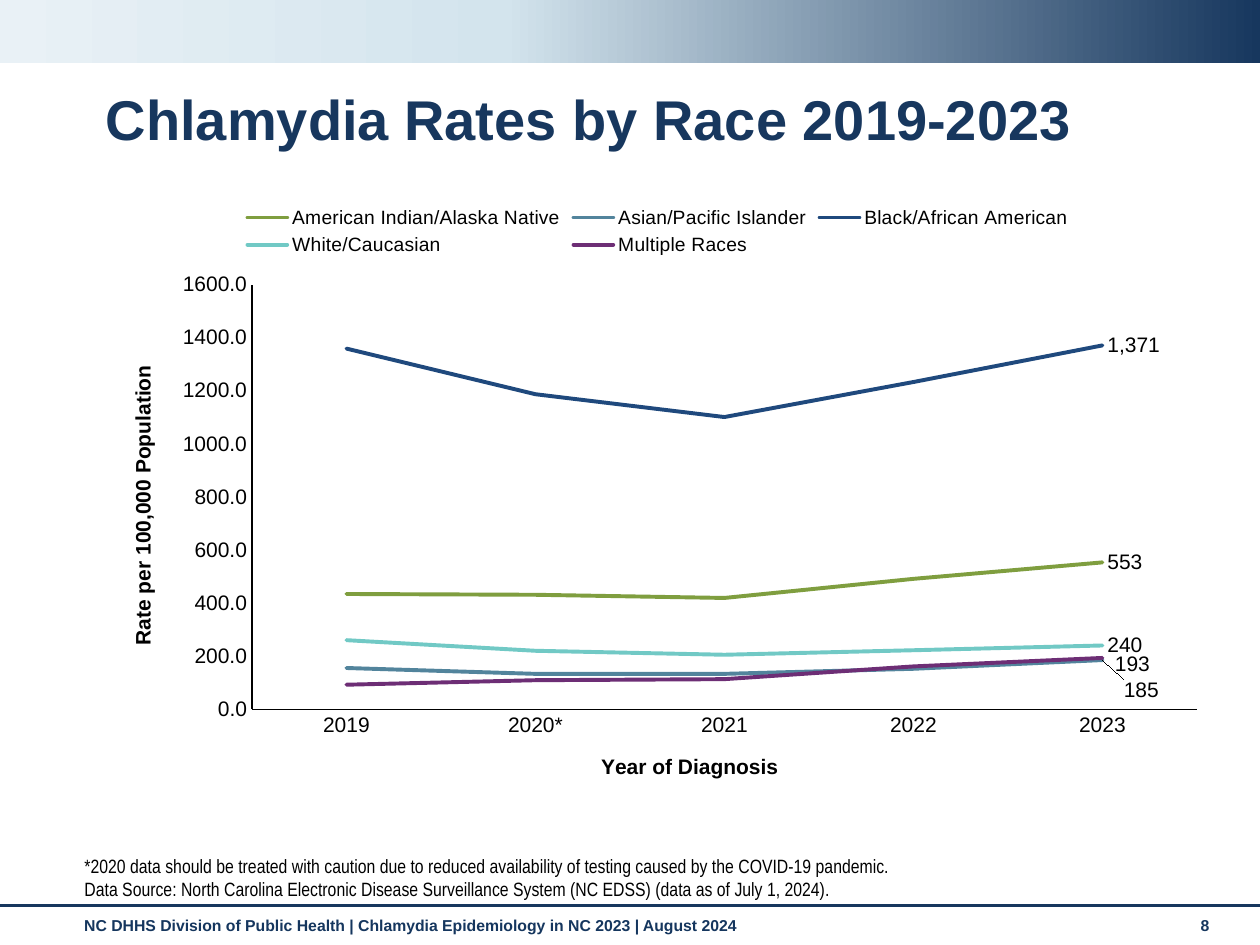
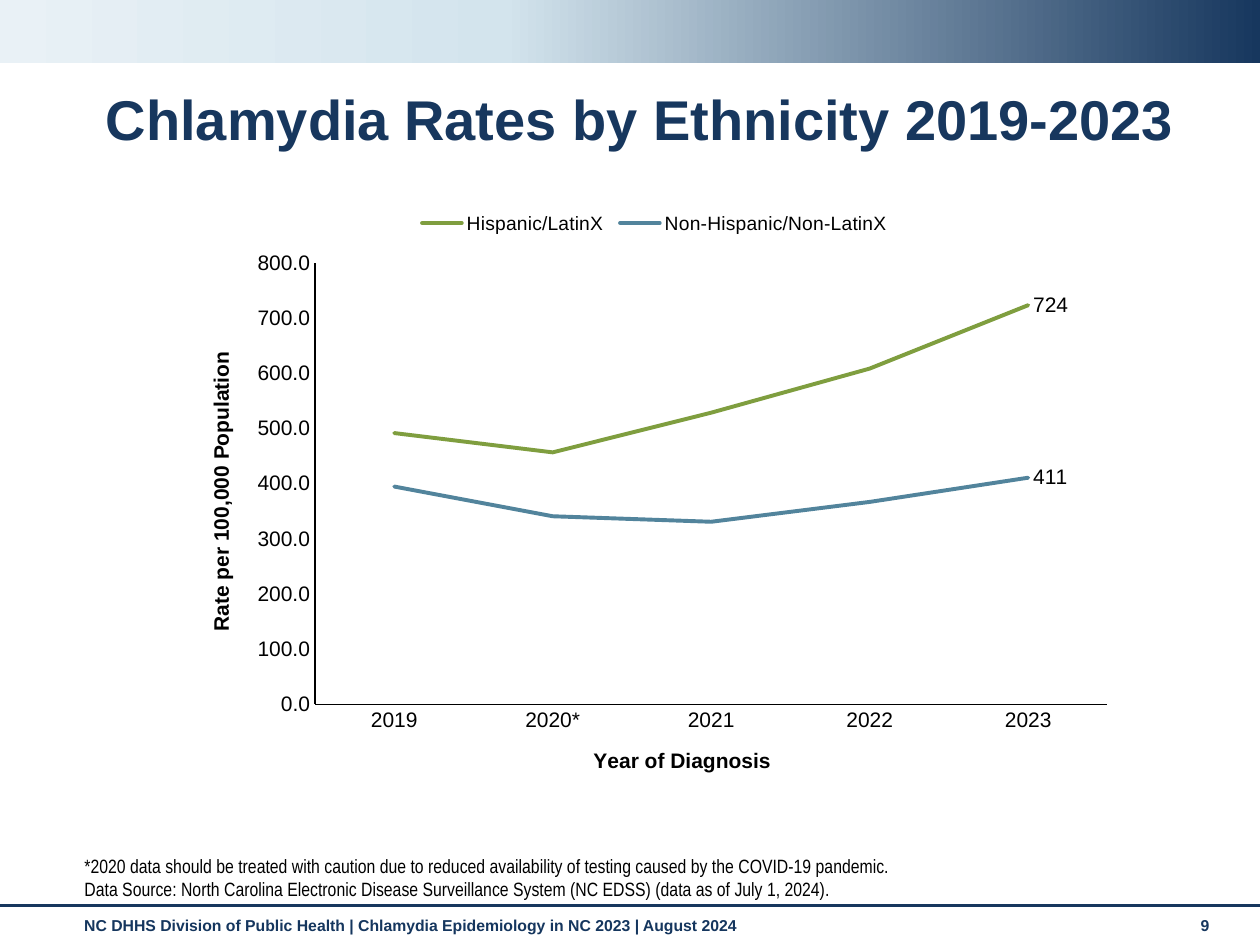
"""Builds two slides on chlamydia rates by race and by ethnicity."""
import copy

import lxml.etree
import pptx
import pptx.chart.data
import pptx.dml.color
import pptx.enum.chart
import pptx.enum.shapes
import pptx.enum.text
import pptx.oxml
import pptx.oxml.ns
import pptx.util

RGBColor = pptx.dml.color.RGBColor
Inches = pptx.util.Inches
Pt = pptx.util.Pt
qn = pptx.oxml.ns.qn

NAVY = RGBColor(0x17, 0x37, 0x5E)
FOOTER_NAVY = RGBColor(0x15, 0x36, 0x5E)
BLACK = RGBColor(0, 0, 0)
PALE_BLUE = RGBColor(0xD3, 0xE4, 0xED)
PALEST_BLUE = RGBColor(0xE9, 0xF1, 0xF6)
GREEN = RGBColor(0x7F, 0x9E, 0x3F)
STEEL = RGBColor(0x52, 0x84, 0x9C)
BLUE = RGBColor(0x1F, 0x49, 0x7D)
TEAL = RGBColor(0x71, 0xC9, 0xC5)
PURPLE = RGBColor(0x6D, 0x2E, 0x75)

TITLE_FONT = {"name": "Arial", "size": Pt(32), "bold": True}
NOTE_FONT = {"name": "Arial Narrow", "size": Pt(11)}
FOOTER_FONT = {"name": "Arial", "size": Pt(9), "bold": True}
CHART_FONT = {"name": "Arial", "size": Pt(10)}
LEGEND_FONT = {"name": "Arial", "size": Pt(11)}
AXIS_FONT = {"name": "Arial", "size": Pt(12), "bold": False}
AXIS_TITLE_FONT = {"name": "Arial", "size": Pt(12), "bold": True}

FOOTER = "NC DHHS Division of Public Health | Chlamydia Epidemiology in NC 2023 | August 2024"
NOTES = [
    "*2020 data should be treated with caution due to reduced availability of testing caused by the COVID-19 pandemic.",
    "Data Source: North Carolina Electronic Disease Surveillance System (NC EDSS) (data as of July 1, 2024).",
]
YEARS = ["2019", "2020*", "2021", "2022", "2023"]
FIRST_NUMBER = 8
NO_LEADER_LINES = (
    '<c:extLst xmlns:c="http://schemas.openxmlformats.org/drawingml/2006/chart">'
    '<c:ext uri="{CE6537A1-D6FC-4f65-9D91-7224C49458BB}" '
    'xmlns:c15="http://schemas.microsoft.com/office/drawing/2012/chart">'
    '<c15:showLeaderLines val="0"/></c:ext></c:extLst>'
)

SLIDES = [
    {
        "title": "Chlamydia Rates by Race 2019-2023",
        "title_width": 8.58,
        "box": (0.82, 1.53, 8.85, 4.86),
        "maximum": 1600,
        "step": 200,
        "plot_box": (2.0, 2.26, 7.5, 3.37),
        "legend_box": (1.91, 1.6, 6.62, 0.47),
        "year_place": (4.74, 5.95),
        "rate_place": (1.0, 2.87),
        "series": [
            ("American Indian/Alaska Native", GREEN, (434, 431, 419, 491, 553), None),
            ("Asian/Pacific Islander", STEEL, (155, 133, 133, 152, 185), (0.13, 0.24)),
            ("Black/African American", BLUE, (1359, 1187, 1101, 1233, 1371), None),
            ("White/Caucasian", TEAL, (260, 220, 205, 222, 240), None),
            ("Multiple Races", PURPLE, (92, 109, 113, 161, 193), (0.06, 0.05)),
        ],
    },
    {
        "title": "Chlamydia Rates by Ethnicity 2019-2023",
        "title_width": 8.8,
        "box": (1.44, 1.57, 7.5, 4.77),
        "maximum": 800,
        "step": 100,
        "plot_box": (2.5, 2.09, 6.29, 3.5),
        "legend_box": (3.27, 1.65, 3.85, 0.24),
        "year_place": (4.68, 5.9),
        "rate_place": (1.62, 2.76),
        "series": [
            ("Hispanic/LatinX", GREEN, (492, 457, 529, 609, 724), None),
            ("Non-Hispanic/Non-LatinX", STEEL, (395, 341, 331, 367, 411), None),
        ],
    },
]


def set_values(target, values):
    """Set each attribute named in a dict of format values."""
    for name, value in values.items():
        setattr(target, name, value)


def set_font(font, values, color=BLACK):
    """Apply a font dict and a colour."""
    set_values(font, values)
    font.color.rgb = color


def set_box(shape, left, top, width, height):
    """Place a shape by lengths in inches."""
    set_values(shape, {"left": Inches(left), "top": Inches(top),
                       "width": Inches(width), "height": Inches(height)})


def add_element(parent, tag, **attributes):
    """Append a child element with the given attributes."""
    return lxml.etree.SubElement(parent, qn(tag), attributes)


def add_footer_text(slide, text, left, width):
    """Add one piece of footer text."""
    shape = slide.shapes.add_textbox(Inches(left), Inches(7.22), Inches(width), Inches(0.3))
    shape.text_frame.word_wrap = True
    shape.text_frame.text = text
    set_font(shape.text_frame.paragraphs[0].runs[0].font, FOOTER_FONT, FOOTER_NAVY)
    return shape


def add_band(slide):
    """Add the gradient band along the top edge."""
    band = slide.shapes.add_shape(pptx.enum.shapes.MSO_SHAPE.RECTANGLE, 0, 0, Inches(10), Inches(0.5))
    band.shadow.inherit = False
    band.line.fill.background()
    band.fill.gradient()
    band.fill.gradient_angle = 180
    stops = band.element.find(".//" + qn("a:gsLst"))
    for stop in list(stops):
        stops.remove(stop)
    for percent, color in ((0, NAVY), (60, PALE_BLUE), (100, PALEST_BLUE)):
        stop = add_element(stops, "a:gs", pos=str(percent * 1000))
        add_element(stop, "a:srgbClr", val=str(color))
    return band


def add_rule(slide):
    """Add the line above the footer."""
    rule = slide.shapes.add_connector(pptx.enum.shapes.MSO_CONNECTOR.STRAIGHT,
                                      0, Inches(7.19), Inches(10), Inches(7.19))
    rule.line.color.rgb = NAVY
    rule.line.width = Pt(1.75)
    add_element(rule.element.spPr, "a:effectLst")
    return rule


def furnish_layout(slide):
    """Move the band, rule and footer text to the layout that the slides share."""
    shapes = [add_band(slide), add_rule(slide), add_footer_text(slide, FOOTER, 0.57, 8.74)]
    for number, shape in enumerate(shapes, 101):
        shape.element.find(".//" + qn("p:cNvPr")).set("id", str(number))
        slide.slide_layout.shapes.element.append(shape.element)


def fill_placeholder(shape, lines, box, font, color, anchor, spacing):
    """Fill a placeholder with plain left-aligned lines."""
    set_box(shape, *box)
    frame = shape.text_frame
    frame.text = "\n".join(lines)
    set_values(frame, {"word_wrap": True, "vertical_anchor": anchor,
                       "auto_size": pptx.enum.text.MSO_AUTO_SIZE.NONE})
    for paragraph in frame.paragraphs:
        set_values(paragraph, {"alignment": pptx.enum.text.PP_ALIGN.LEFT, "line_spacing": spacing,
                               "space_before": Pt(0)})
        properties = paragraph._p.get_or_add_pPr()
        properties.set("marL", "0")
        properties.set("indent", "0")
        add_element(properties, "a:buNone")
        set_font(paragraph.runs[0].font, font, color)


def make_layout(chart_box, lengths, offset=False, inner=False):
    """Turn a place on the slide, or an offset, into a layout in shares of the chart."""
    left, top, width, height = chart_box
    layout = lxml.etree.Element(qn("c:layout"))
    manual = add_element(layout, "c:manualLayout")
    if inner:
        add_element(manual, "c:layoutTarget", val="inner")
    if not offset:
        add_element(manual, "c:xMode", val="edge")
        add_element(manual, "c:yMode", val="edge")
    origins = (0, 0) if offset else (left, top, 0, 0)
    for name, length, origin, size in zip("xywh", lengths, origins, (width, height, width, height)):
        add_element(manual, "c:" + name, val=str((length - origin) / size))
    return layout


def place(element, index, layout):
    """Give a chart element its layout in place of any other."""
    for previous in element.findall(qn("c:layout")):
        element.remove(previous)
    element.insert(index, layout)


def format_axis(axis, title, layout):
    """Format an axis, its labels and its title."""
    set_values(axis, {"has_major_gridlines": False,
                      "major_tick_mark": pptx.enum.chart.XL_TICK_MARK.NONE,
                      "minor_tick_mark": pptx.enum.chart.XL_TICK_MARK.NONE})
    axis.format.line.color.rgb = BLACK
    axis.format.line.width = Pt(0.75)
    set_font(axis.tick_labels.font, AXIS_FONT)
    frame = axis.axis_title.text_frame
    frame.text = title
    set_font(frame.paragraphs[0].runs[0].font, AXIS_TITLE_FONT)
    place(axis.axis_title.element, 1, layout)


def label_last_point(series, element, layout):
    """Show the value of the last point only, moved by a layout if there is one."""
    labels = series.data_labels
    set_values(labels, {"show_value": True, "number_format": "#,##0", "number_format_is_linked": False,
                        "position": pptx.enum.chart.XL_LABEL_POSITION.RIGHT})
    set_font(labels.font, AXIS_FONT)
    group = element.find(qn("c:dLbls"))
    for leader in group.findall(qn("c:showLeaderLines")):
        group.remove(leader)
    shared = [copy.deepcopy(child) for child in group]
    group.append(pptx.oxml.parse_xml(NO_LEADER_LINES))
    last = len(YEARS) - 1
    for index in range(last):
        label = lxml.etree.Element(qn("c:dLbl"))
        add_element(label, "c:idx", val=str(index))
        add_element(label, "c:delete", val="1")
        group.insert(index, label)
    if layout is not None:
        label = lxml.etree.Element(qn("c:dLbl"))
        add_element(label, "c:idx", val=str(last))
        label.extend([layout, *shared])
        group.insert(last, label)


def add_rate_chart(slide, content):
    """Add the line chart of yearly rates."""
    data = pptx.chart.data.CategoryChartData(number_format="####0.0")
    data.categories = YEARS
    for name, _, values, _ in content["series"]:
        data.add_series(name, values)
    box = content["box"]
    chart = slide.shapes.add_chart(pptx.enum.chart.XL_CHART_TYPE.LINE, *map(Inches, box), data).chart
    set_values(chart, {"has_title": False, "has_legend": True})
    set_font(chart.font, CHART_FONT)
    set_values(chart.legend, {"position": pptx.enum.chart.XL_LEGEND_POSITION.TOP, "include_in_layout": False})
    set_font(chart.legend.font, LEGEND_FONT)
    chart.plots[0].vary_by_categories = False

    format_axis(chart.category_axis, "Year of Diagnosis", make_layout(box, content["year_place"]))
    rates = chart.value_axis
    format_axis(rates, "Rate per 100,000 Population", make_layout(box, content["rate_place"]))
    rates.axis_title.element.find(".//" + qn("a:bodyPr")).set("rot", "-5400000")
    set_values(rates, {"minimum_scale": 0, "maximum_scale": content["maximum"], "major_unit": content["step"]})
    set_values(rates.tick_labels, {"number_format": "####0.0", "number_format_is_linked": False})

    root = chart.element
    elements = root.findall(".//" + qn("c:ser"))
    for series, element, (_, color, _, offset) in zip(chart.plots[0].series, elements, content["series"]):
        series.smooth = False
        series.format.line.color.rgb = color
        series.format.line.width = Pt(2.25)
        element.find(".//" + qn("a:ln")).set("cap", "rnd")
        label_last_point(series, element, make_layout(box, offset, offset=True) if offset else None)
    place(root.find(".//" + qn("c:plotArea")), 0, make_layout(box, content["plot_box"], inner=True))
    place(root.find(".//" + qn("c:legend")), 1, make_layout(box, content["legend_box"]))


def main():
    """Build and save the presentation."""
    presentation = pptx.Presentation()
    presentation.slide_width = Inches(10)
    presentation.slide_height = Inches(7.5)
    anchors = pptx.enum.text.MSO_ANCHOR
    for number, content in enumerate(SLIDES, FIRST_NUMBER):
        slide = presentation.slides.add_slide(presentation.slide_layouts[1])
        if number == FIRST_NUMBER:
            furnish_layout(slide)
        fill_placeholder(slide.shapes.title, [content["title"]], (0.74, 0.67, content["title_width"], 0.6),
                         TITLE_FONT, NAVY, anchors.MIDDLE, 0.9)
        fill_placeholder(slide.placeholders[1], NOTES, (0.57, 6.84, 9.1, 0.36),
                         NOTE_FONT, BLACK, anchors.BOTTOM, 1.0)
        add_rate_chart(slide, content)
        add_footer_text(slide, str(number), 9.43, 0.44)
    presentation.save("out.pptx")


if __name__ == "__main__":
    main()
